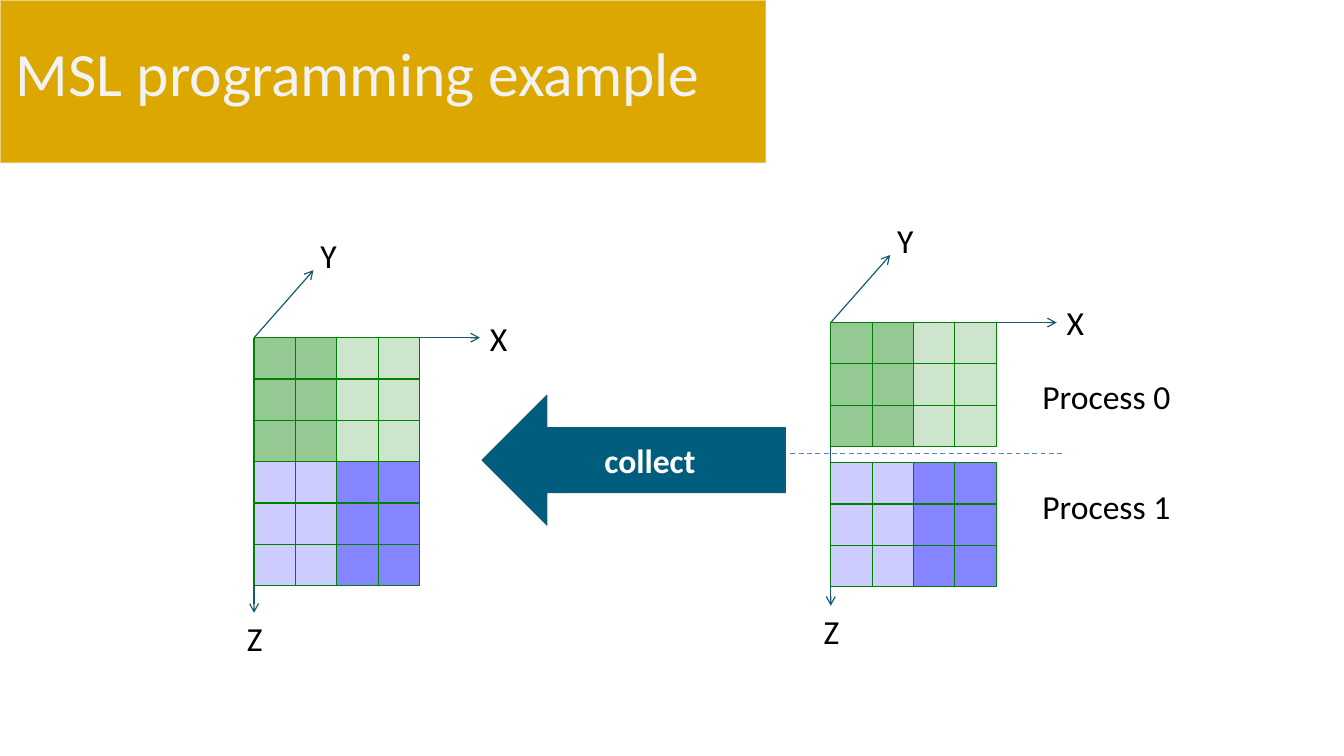
from lxml import etree
from pptx import Presentation
from pptx.dml.color import RGBColor
from pptx.enum.dml import MSO_LINE_DASH_STYLE as DASH
from pptx.enum.shapes import MSO_CONNECTOR, MSO_SHAPE
from pptx.enum.text import MSO_ANCHOR, PP_ALIGN
from pptx.oxml.ns import qn
from pptx.util import Inches, Pt

GOLD = RGBColor(0xDC, 0xA8, 0x00)
OFF_WHITE = RGBColor(0xF9, 0xF9, 0xF9)
TITLE_GRAY = RGBColor(0xF2, 0xF2, 0xF2)
WHITE = RGBColor(0xFF, 0xFF, 0xFF)
BLACK = RGBColor(0x00, 0x00, 0x00)
GREEN = RGBColor(0x00, 0x80, 0x00)
BLUE = RGBColor(0x00, 0x00, 0xFF)
TEAL = RGBColor(0x00, 0x5D, 0x7D)
DARK_TEAL = RGBColor(0x17, 0x5B, 0x73)
DIVIDER_BLUE = RGBColor(0x4F, 0x81, 0xBD)

CELL = 0.41
COLUMNS = 4
ROWS_PER_PROCESS = 3
# Opacity in percent of the left and right halves of each block
GREEN_OPACITIES = (42, 20)
BLUE_OPACITIES = (20, 48)


def set_opacity(fill, percent):
    color = fill._xPr.find(qn("a:solidFill"))[0]
    etree.SubElement(color, qn("a:alpha"), val=str(percent * 1000))


def add_filled_shape(slide, kind, box, fill_color, line_color, line_width):
    shape = slide.shapes.add_shape(kind, *map(Inches, box))
    shape.shadow.inherit = False
    shape.fill.solid()
    shape.fill.fore_color.rgb = fill_color
    shape.line.color.rgb = line_color
    shape.line.width = Pt(line_width)
    return shape


def write_text(text_frame, text, size, color, bold=False):
    paragraph = text_frame.paragraphs[0]
    run = paragraph.add_run()
    run.text = text
    run.font.name = "Calibri"
    run.font.size = Pt(size)
    run.font.bold = bold
    run.font.color.rgb = color
    return paragraph


def add_label(slide, text, box, wrap=False, size=24, color=BLACK):
    text_frame = slide.shapes.add_textbox(*map(Inches, box)).text_frame
    text_frame.word_wrap = wrap
    write_text(text_frame, text, size, color)
    return text_frame


def add_line(slide, start, end, color):
    line = slide.shapes.add_connector(
        MSO_CONNECTOR.STRAIGHT, *map(Inches, (*start, *end)))
    line.line.color.rgb = color
    line.line.width = Pt(0.85)
    etree.SubElement(line._element.spPr, qn("a:effectLst"))
    return line


def add_axis(slide, start, end):
    axis = add_line(slide, start, end, DARK_TEAL)
    etree.SubElement(axis.line._get_or_add_ln(), qn("a:tailEnd"), type="arrow")


def add_axes(slide, left, top, z_length):
    origin = (left, top)
    add_axis(slide, origin, (left + 2.24, top))
    add_axis(slide, origin, (left, top + z_length))
    add_axis(slide, origin, (left + 0.59, top - 0.67))
    add_label(slide, "X", (left + 2.24, top - 0.25, 0.38, 0.5))
    add_label(slide, "Y", (left + 0.56, top - 1.07, 0.38, 0.5))
    add_label(slide, "Z", (left - 0.17, top + z_length, 0.36, 0.5))


def add_block(slide, left, top, color, opacities):
    """Draw the grid of cells that one process owns."""
    for row in range(ROWS_PER_PROCESS):
        for column in range(COLUMNS):
            box = (left + column * CELL, top + row * CELL, CELL, CELL)
            cell = add_filled_shape(
                slide, MSO_SHAPE.RECTANGLE, box, color, GREEN, 0.75)
            set_opacity(cell.fill, opacities[column // 2])


def add_array(slide, left, top, z_length, gap=0):
    """Draw the axes and the two process blocks, set apart by gap."""
    add_axes(slide, left, top, z_length)
    add_block(slide, left, top, GREEN, GREEN_OPACITIES)
    add_block(slide, left, top + ROWS_PER_PROCESS * CELL + gap,
              BLUE, BLUE_OPACITIES)


def add_title(slide):
    banner = add_filled_shape(slide, MSO_SHAPE.FLOWCHART_PROCESS,
                              (0, 0, 7.6, 1.62), GOLD, OFF_WHITE, 1.35)
    set_opacity(banner.line.fill, 50)
    text_frame = add_label(slide, "MSL programming example",
                           (0.06, 0.03, 7.51, 1.45), True, 44, TITLE_GRAY)
    text_frame.vertical_anchor = MSO_ANCHOR.MIDDLE
    text_frame.paragraphs[0].line_spacing = 0.9


def add_collect_arrow(slide):
    arrow = add_filled_shape(slide, MSO_SHAPE.LEFT_ARROW,
                             (4.78, 3.92, 3.01, 1.29), TEAL, DARK_TEAL, 0.75)
    arrow.text_frame.vertical_anchor = MSO_ANCHOR.MIDDLE
    paragraph = write_text(arrow.text_frame, "collect", 24, WHITE, bold=True)
    paragraph.alignment = PP_ALIGN.CENTER


def main():
    presentation = Presentation()
    presentation.slide_width = Inches(13.33)
    presentation.slide_height = Inches(7.5)
    slide = presentation.slides.add_slide(presentation.slide_layouts[6])

    add_title(slide)
    add_array(slide, 8.24, 3.2, 2.81, gap=0.16)
    divider = add_line(slide, (7.84, 4.5), (10.55, 4.5), DIVIDER_BLUE)
    divider.line.dash_style = DASH.DASH
    for process, top in enumerate((3.68, 4.77)):
        add_label(slide, f"Process {process}", (10.24, top, 1.63, 0.5), True)
    add_array(slide, 2.52, 3.35, 2.73)
    add_collect_arrow(slide)

    presentation.save("out.pptx")


if __name__ == "__main__":
    main()
